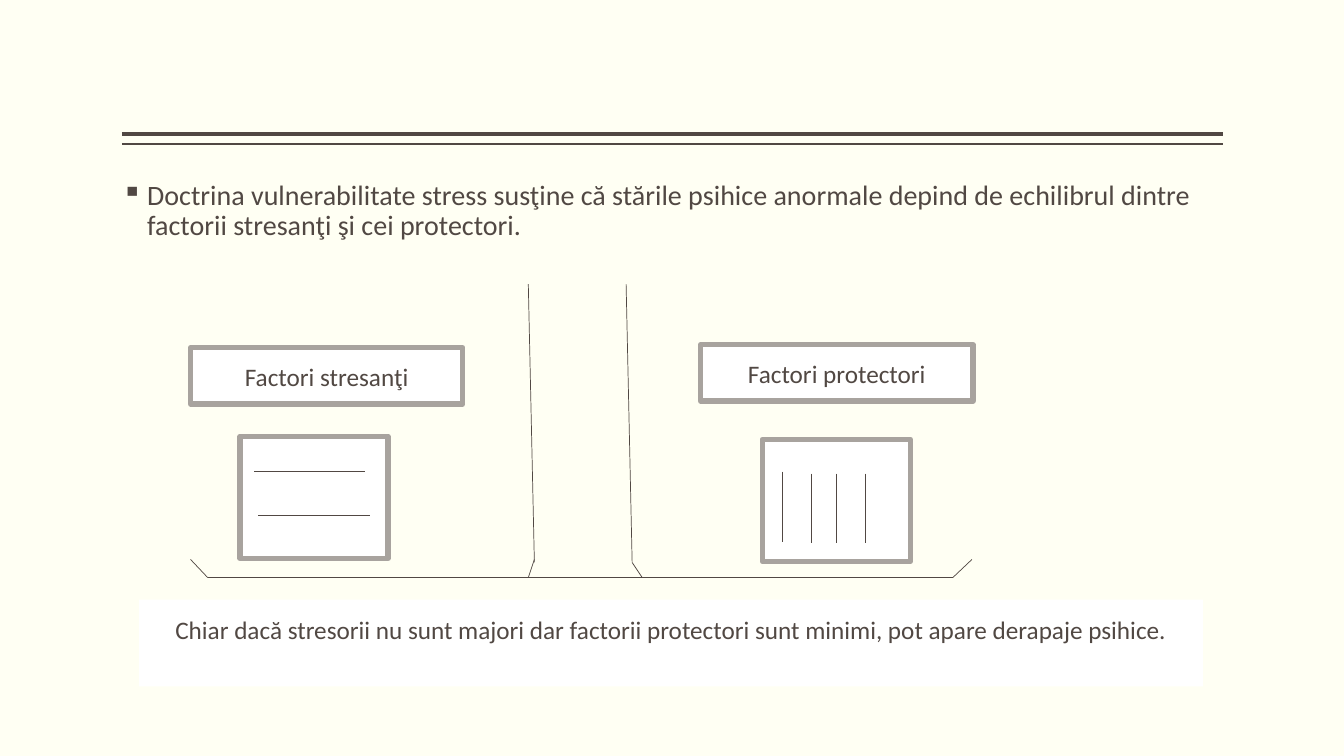
import pptx
import pptx.util
import pptx.dml.color
import pptx.enum.shapes
import pptx.enum.text
import pptx.oxml.ns
from lxml import etree
from dataclasses import dataclass

Inches = pptx.util.Inches
Align = pptx.enum.text.PP_ALIGN
Anchor = pptx.enum.text.MSO_ANCHOR


@dataclass(frozen=True)
class Theme:
    back: str = "FFFFF3"
    ink: str = "514843"
    edge: str = "A8A39E"
    white: str = "FFFFFF"
    font: str = "Calibri"
    lead: float = 20
    body: float = 18
    thick: float = 3
    thin: float = 1
    hair: float = 0.5
    frame: float = 3.78


theme = Theme()


def color(code):
    return pptx.dml.color.RGBColor.from_string(code)


def apply(item, values):
    for name, value in values.items():
        setattr(item, name, value)


def stroke(slide, box, ends, width=theme.hair):
    left, top = box[:2]
    x1, y1, x2, y2 = ends
    line = slide.shapes.add_connector(
        pptx.enum.shapes.MSO_CONNECTOR.STRAIGHT,
        Inches(left + x1), Inches(top + y1), Inches(left + x2), Inches(top + y2))
    line.line.color.rgb = color(theme.ink)
    line.line.width = pptx.util.Pt(width)
    etree.SubElement(line._element.spPr, pptx.oxml.ns.qn("a:effectLst"))


def panel(slide, box, framed=True):
    shape = slide.shapes.add_shape(
        pptx.enum.shapes.MSO_SHAPE.RECTANGLE, *map(Inches, box))
    shape.shadow.inherit = False
    shape.fill.solid()
    shape.fill.fore_color.rgb = color(theme.white)
    if framed:
        shape.line.color.rgb = color(theme.edge)
        shape.line.width = pptx.util.Pt(theme.frame)
    else:
        shape.line.fill.background()
    return shape


def write(shape, text, size, frame, para):
    apply(shape.text_frame, {"word_wrap": True, **frame})
    first = shape.text_frame.paragraphs[0]
    apply(first, para)
    run = first.add_run()
    run.text = text
    apply(run.font, {"name": theme.font, "size": pptx.util.Pt(size)})
    run.font.color.rgb = color(theme.ink)
    return first


def header(slide, box):
    width, height = box[2:]
    for drop, weight in ((0, theme.thick), (height, theme.thin)):
        stroke(slide, box, (0, drop, width, drop), weight)


def thesis(slide, box, text):
    shape = slide.shapes.add_textbox(*map(Inches, box))
    frame = {"margin_left": 0, "margin_right": 0,
             "margin_top": Inches(0.05), "margin_bottom": Inches(0.05)}
    para = {"line_spacing": 0.9, "space_before": pptx.util.Pt(18)}
    first = write(shape, text, theme.lead, frame, para)
    props = first._p.get_or_add_pPr()
    props.set("marL", str(Inches(0.25)))
    props.set("indent", str(-Inches(0.25)))
    mark = etree.SubElement(props, pptx.oxml.ns.qn("a:buChar"))
    mark.set("char", "▪")


def balance(slide, box):
    width, height = box[2:]
    for ends in (
        (3.35, 0, 3.41, 2.76),
        (4.32, 0, 4.38, 2.76),
        (0.17, height, width - 0.19, height),
        (0, 2.73, 0.17, height),
        (width, 2.73, width - 0.19, height),
        (3.41, 2.73, 3.35, height),
        (4.38, 2.76, 4.48, height),
    ):
        stroke(slide, box, ends)


def factor(slide, box, text, shift, bars):
    left, top, width = box[:3]
    label = panel(slide, (left, top, width, 0.56))
    write(label, text, theme.body, {"vertical_anchor": Anchor.MIDDLE},
          {"alignment": Align.CENTER})
    case = (left + shift[0], top + shift[1], 1.47, 1.21)
    panel(slide, case)
    for ends in bars:
        stroke(slide, case, ends)


def note(slide, box, text):
    shape = panel(slide, box, framed=False)
    write(shape, text, theme.body,
          {"vertical_anchor": Anchor.TOP, "margin_top": Inches(0.14)},
          {"alignment": Align.CENTER})


def main():
    deck = pptx.Presentation()
    apply(deck, {"slide_width": Inches(13.33), "slide_height": Inches(7.5)})
    slide = deck.slides.add_slide(deck.slide_layouts[6])
    slide.background.fill.solid()
    slide.background.fill.fore_color.rgb = color(theme.back)

    header(slide, (1.21, 1.33, 10.92, 0.1))
    thesis(slide, (1.21, 1.75, 10.75, 5),
           "Doctrina vulnerabilitate stress susţine că stările psihice anormale "
           "depind de echilibrul dintre factorii stresanţi şi cei protectori.")
    balance(slide, (1.89, 2.82, 7.75, 2.91))
    factor(slide, (1.89, 3.45, 2.7, 2.09), "Factori stresanţi", (0.49, 0.88),
           [(0.14, 0.35, 1.24, 0.35), (0.18, 0.78, 1.29, 0.78)])
    factor(slide, (6.95, 3.42, 2.7, 2.15), "Factori protectori", (0.61, 0.94),
           [(0.2, 0.32, 0.2, 1.02)]
           + [(x, 0.34, x, 1.03) for x in (0.49, 0.74, 1.02)])
    note(slide, (1.38, 5.95, 10.55, 0.86),
         "Chiar dacă stresorii nu sunt majori dar factorii protectori "
         "sunt minimi, pot apare derapaje psihice.")
    deck.save("out.pptx")


if __name__ == "__main__":
    main()
